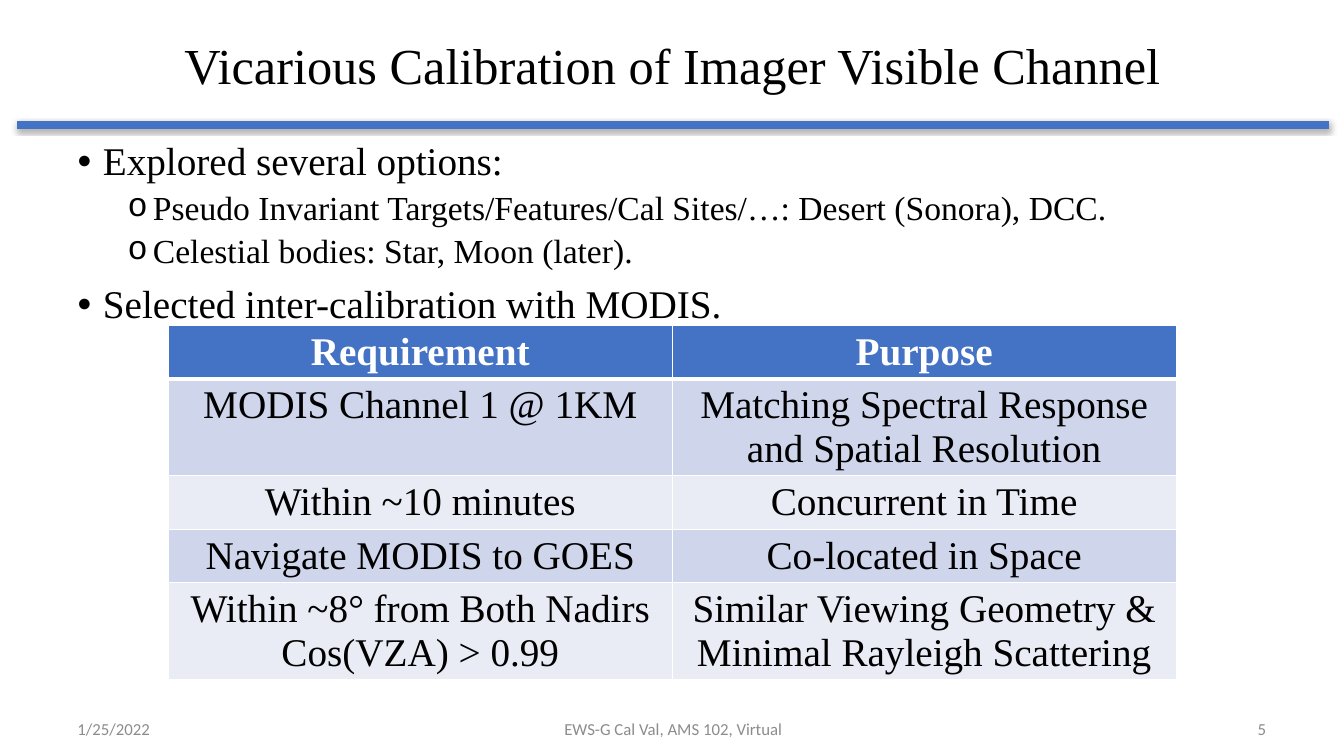
from dataclasses import dataclass

from lxml import etree
from pptx import Presentation
from pptx import util as u
from pptx.dml.color import RGBColor
from pptx.enum import shapes, text
from pptx.oxml import ns

COLORS = {
    "accent": "4472C4",
    "band_dark": "CFD5EA",
    "band_light": "E9EBF5",
    "white": "FFFFFF",
    "black": "000000",
    "footer": "8C8C8C",
}
SERIF, SANS = "Times New Roman", "Calibri"
LEFT, CENTER, RIGHT = text.PP_ALIGN.LEFT, text.PP_ALIGN.CENTER, text.PP_ALIGN.RIGHT


@dataclass(frozen=True)
class Bullet:
    words: str
    level: int = 0


@dataclass(frozen=True)
class BulletStyle:
    sign: str
    sign_font: str
    size: float
    before: float
    margin: float


@dataclass(frozen=True)
class Footer:
    words: str
    left: float
    width: float
    align: text.PP_ALIGN


BULLET_STYLES = (
    BulletStyle("•", "Arial", 28, 10, 0.64),
    BulletStyle("o", "Courier New", 24, 5, 1.9),
)
BULLETS = (
    Bullet("Explored several options:"),
    Bullet("Pseudo Invariant Targets/Features/Cal Sites/…: Desert (Sonora), DCC.", 1),
    Bullet("Celestial bodies: Star, Moon (later).", 1),
    Bullet("Selected inter-calibration with MODIS."),
)
REQUIREMENTS = (
    ("Requirement", "Purpose"),
    ("MODIS Channel 1 @ 1KM", "Matching Spectral Response and Spatial Resolution"),
    ("Within ~10 minutes", "Concurrent in Time"),
    ("Navigate MODIS to GOES", "Co-located in Space"),
    ("Within ~8° from Both Nadirs\nCos(VZA) > 0.99",
     "Similar Viewing Geometry & Minimal Rayleigh Scattering"),
)
FOOTERS = (
    Footer("1/25/2022", 1.7, 5.1, LEFT),
    Footer("EWS-G Cal Val, AMS 102, Virtual", 9.35, 15.24, CENTER),
    Footer("5", 27.13, 5.03, RIGHT),
)


def rgb(name: str) -> RGBColor:
    return RGBColor.from_string(COLORS[name])


def add_xml(parent, tag: str, **attributes):
    return etree.SubElement(parent, ns.qn(tag), attributes)


def set_all(target, values: dict) -> None:
    for name, value in values.items():
        setattr(target, name, value)


def format_font(font, size: float, color: str, name: str = SERIF, bold: bool = False) -> None:
    set_all(font, {"size": u.Pt(size), "name": name, "bold": bold})
    font.color.rgb = rgb(color)


def place(box, left: float, top: float, width: float, height: float) -> None:
    set_all(box, {"left": u.Cm(left), "top": u.Cm(top),
                  "width": u.Cm(width), "height": u.Cm(height)})


def set_frame(frame, anchor) -> None:
    set_all(frame, {"word_wrap": True, "auto_size": text.MSO_AUTO_SIZE.NONE,
                    "vertical_anchor": anchor})


def add_rule(page) -> None:
    rule = page.shapes.add_connector(
        shapes.MSO_CONNECTOR.STRAIGHT, u.Cm(0.43), u.Cm(3.15), u.Cm(33.5), u.Cm(3.15))
    rule.line.width = u.Pt(6)
    rule.line.color.rgb = rgb("accent")
    effects = add_xml(rule._element.spPr, "a:effectLst")
    shadow = add_xml(effects, "a:outerShdw", blurRad="40000", dist="20000",
                     dir="5400000", rotWithShape="0")
    shade = add_xml(shadow, "a:srgbClr", val=COLORS["black"])
    add_xml(shade, "a:alpha", val="31000")


def fill_title(box, words: str) -> None:
    place(box, 4.27, 0.64, 25.37, 2.18)
    set_frame(box.text_frame, text.MSO_ANCHOR.MIDDLE)
    para = box.text_frame.paragraphs[0]
    set_all(para, {"text": words, "alignment": CENTER, "line_spacing": 0.9})
    format_font(para.runs[0].font, 36, "black")


def fill_body(box) -> None:
    place(box, 1.7, 3.45, 30.45, 14.3)
    frame = box.text_frame
    set_frame(frame, text.MSO_ANCHOR.TOP)
    for index, bullet in enumerate(BULLETS):
        style = BULLET_STYLES[bullet.level]
        para = frame.add_paragraph() if index else frame.paragraphs[0]
        set_all(para, {"text": bullet.words, "level": bullet.level, "alignment": LEFT,
                       "line_spacing": 0.9,
                       "space_before": u.Pt(style.before if index else 0)})
        properties = para._p.get_or_add_pPr()
        properties.set("marL", str(u.Cm(style.margin)))
        properties.set("indent", str(u.Cm(-0.64)))
        add_xml(properties, "a:buFont", typeface=style.sign_font)
        add_xml(properties, "a:buChar", char=style.sign)
        format_font(para.runs[0].font, style.size, "black")


def set_borders(cell, bottom: float) -> None:
    properties = cell._tc.get_or_add_tcPr()
    widths = {"a:lnL": 1, "a:lnR": 1, "a:lnT": 1, "a:lnB": bottom}
    for index, (tag, width) in enumerate(widths.items()):
        edge = etree.Element(ns.qn(tag), w=str(u.Pt(width)))
        add_xml(add_xml(edge, "a:solidFill"), "a:srgbClr", val=COLORS["white"])
        properties.insert(index, edge)


def add_requirements(page) -> None:
    row_count, column_count = len(REQUIREMENTS), len(REQUIREMENTS[0])
    table = page.shapes.add_table(
        row_count, column_count, u.Cm(4.24), u.Cm(8.2),
        u.Cm(25.4), u.Cm(1.04 * row_count)).table
    for row, entries in enumerate(REQUIREMENTS):
        header = row == 0
        band = "accent" if header else ("band_light", "band_dark")[row % 2]
        for column, words in enumerate(entries):
            cell = table.cell(row, column)
            cell.text = words
            cell.fill.solid()
            cell.fill.fore_color.rgb = rgb(band)
            set_borders(cell, 3 if header else 1)
            for para in cell.text_frame.paragraphs:
                para.alignment = CENTER
                format_font(para.runs[0].font, 28, "white" if header else "black", bold=header)


def add_footer(page, footer: Footer) -> None:
    box = page.shapes.add_textbox(
        u.Cm(footer.left), u.Cm(17.98), u.Cm(footer.width), u.Cm(0.79))
    set_frame(box.text_frame, text.MSO_ANCHOR.MIDDLE)
    para = box.text_frame.paragraphs[0]
    set_all(para, {"text": footer.words, "alignment": footer.align})
    format_font(para.runs[0].font, 12, "footer", SANS)


def main() -> None:
    deck = Presentation()
    set_all(deck, {"slide_width": u.Cm(33.87), "slide_height": u.Cm(19.05)})
    page = deck.slides.add_slide(deck.slide_layouts[1])

    # Heading and the rule below it
    add_rule(page)
    fill_title(page.shapes.title, "Vicarious Calibration of Imager Visible Channel")

    # Options and the matching requirements
    fill_body(page.placeholders[1])
    add_requirements(page)

    # Date, event and page number
    for footer in FOOTERS:
        add_footer(page, footer)

    deck.save("out.pptx")


if __name__ == "__main__":
    main()
